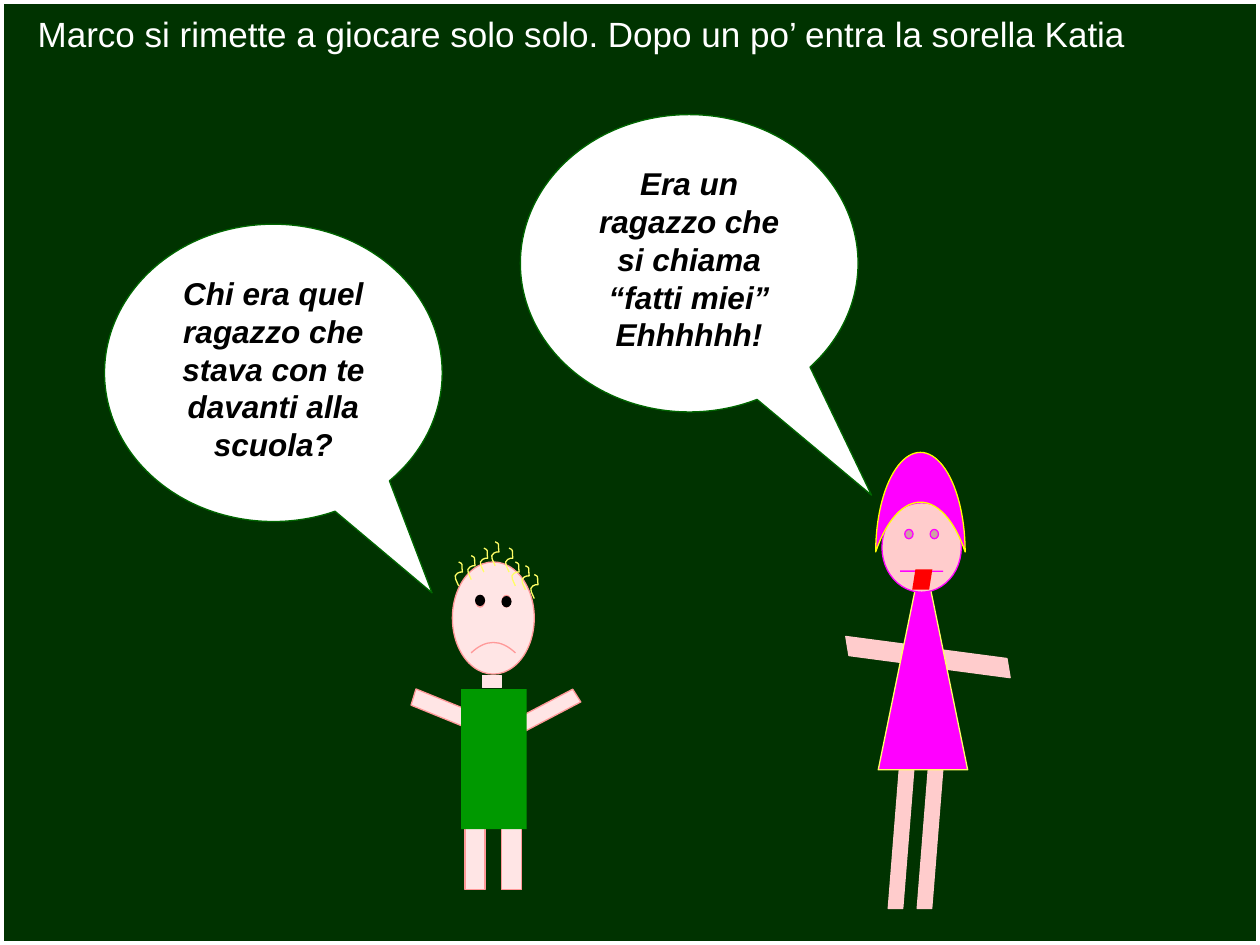
"""Builds a comic slide: Marco and Katia talk in speech balloons."""
from lxml.etree import SubElement
from pptx import Presentation
from pptx.dml.color import RGBColor
from pptx.enum.shapes import MSO_SHAPE as Kind
from pptx.enum.text import MSO_ANCHOR as Anchor, PP_ALIGN as Align
from pptx.oxml.ns import qn
from pptx.util import Inches, Pt

WIDTH, HEIGHT = 10, 7.5
CAPTION = "Marco si rimette a giocare solo solo. Dopo un po’ entra la sorella Katia"
MARCO_WORDS = ["Chi era quel ragazzo che stava con te davanti alla scuola?"]
KATIA_WORDS = ["Era un ragazzo che si chiama “fatti miei”", "Ehhhhhh!"]

NIGHT, WHITE, BLACK, LEAF, SHIRT = "003300", "FFFFFF", "000000", "006600", "009900"
PALE, BLUSH, ROSE, PINK = "FFE5E5", "FF9999", "FFCCCC", "FF00FF"
YELLOW, STRAW, RED = "FFFF00", "FFFF66", "FF0000"
SLANT, BOX, OVAL, SMILEY = Kind.PARALLELOGRAM, Kind.RECTANGLE, Kind.OVAL, Kind.SMILEY_FACE

# kind, left, top, width, height, rotation, adjustments, fill, line
MARCO = [
    (SLANT, 4.28, 5.39, 0.16, 0.49, 57.6, [0.25], PALE, BLUSH),
    (SLANT, 3.42, 5.38, 0.18, 0.49, 106.9, [0.25], PALE, BLUSH),
    (BOX, 3.69, 6.48, 0.16, 0.58, 0, [], PALE, BLUSH),
    (BOX, 3.98, 6.48, 0.16, 0.58, 0, [], PALE, BLUSH),
    (SMILEY, 3.59, 4.46, 0.65, 0.89, 0, [-0.05], PALE, BLUSH),
    (OVAL, 3.98, 4.73, 0.08, 0.09, 0, [], BLACK, None),
    (OVAL, 3.77, 4.72, 0.08, 0.09, 0, [], BLACK, None),
    (BOX, 3.83, 5.36, 0.15, 0.1, 0, [], PALE, PALE),
    (BOX, 3.66, 5.47, 0.52, 1.11, 0, [], SHIRT, None),
]
KATIA = [
    (SLANT, 7.56, 4.99, 0.32, 0.55, 80.7, [0.52], ROSE, ROSE),
    (SLANT, 6.85, 4.89, 0.32, 0.55, 80.7, [0.52], ROSE, ROSE),
    (SLANT, 7.05, 5.64, 0.24, 1.57, 0, [0.52], ROSE, ROSE),
    (SLANT, 7.28, 5.64, 0.24, 1.57, 0, [0.52], ROSE, ROSE),
    (Kind.ISOSCELES_TRIANGLE, 6.97, 4.38, 0.71, 1.73, 0, [0.5], PINK, STRAW),
    (SMILEY, 7, 3.99, 0.63, 0.71, 0, [0], ROSE, PINK),
    (Kind.MOON, 6.91, 3.63, 0.79, 0.71, 90, [0.5], PINK, YELLOW),
]
TONGUE = (SLANT, 7.24, 4.52, 0.16, 0.16, 0, [0.16], RED, None)
MARCO_BALLOON = (Kind.OVAL_CALLOUT, 0.83, 1.78, 2.68, 2.36, 0, [0.47, 0.74], WHITE, LEAF)
KATIA_BALLOON = (Kind.OVAL_CALLOUT, 4.13, 0.91, 2.68, 2.36, 0, [0.54, 0.78], WHITE, LEAF)
FRAME = (BOX, 0, 0, WIDTH, HEIGHT, 0, [], None, WHITE)

CURL_SPOTS = [(3.59, 4.46), (3.69, 4.41), (3.99, 4.35), (4.04, 4.46),
              (3.88, 4.3), (4.19, 4.56), (4.12, 4.49), (3.79, 4.35)]
CURL = [(0.05, 0.19), (0.04, 0.16), (0, 0.11), (0.04, 0.09), (0.05, 0.08),
        (0.07, 0.08), (0.08, 0.08), (0.07, 0.01), (0.09, 0.02), (0.05, 0)]


def color(code):
    return RGBColor.from_string(code)


def paint(shape, fill, line, weight=0.75):
    shape.shadow.inherit = False
    if fill:
        shape.fill.solid()
        shape.fill.fore_color.rgb = color(fill)
    else:
        shape.fill.background()
    if line:
        shape.line.color.rgb = color(line)
        shape.line.width = Pt(weight)
    else:
        shape.line.fill.background()


def draw(shapes, part, weight=0.75):
    kind, left, top, width, height, rotation, adjustments, fill, line = part
    shape = shapes.add_shape(kind, *map(Inches, (left, top, width, height)))
    shape.rotation = rotation
    for index, value in enumerate(adjustments):
        shape.adjustments[index] = value
    paint(shape, fill, line, weight)
    return shape


def bend(shape):
    segments = list(shape.element.iter(qn("a:lnTo")))
    outline = segments[0].getparent()
    for start in range(0, len(segments), 3):
        curve = SubElement(outline, qn("a:cubicBezTo"))
        for segment in segments[start:start + 3]:
            curve.append(segment[0])
            outline.remove(segment)


def draw_curl(shapes, left, top):
    first, *rest = [(Inches(left + x), Inches(top + y)) for x, y in CURL]
    builder = shapes.build_freeform(*first)
    builder.add_line_segments(rest, close=False)
    curl = builder.convert_to_shape()
    bend(curl)
    paint(curl, None, STRAW)


def write(shape, lines, size, ink, emphasis=None, align=Align.LEFT):
    frame = shape.text_frame
    frame.word_wrap = True
    frame.vertical_anchor = Anchor.TOP
    frame.text = "\n".join(lines)
    for paragraph in frame.paragraphs:
        paragraph.alignment = align
        for run in paragraph.runs:
            run.font.name, run.font.size = "Arial", Pt(size)
            run.font.bold = run.font.italic = emphasis
            run.font.color.rgb = color(ink)


def speak(shapes, balloon, lines):
    write(draw(shapes, balloon), lines, 18, BLACK, True, Align.CENTER)


def main():
    deck = Presentation()
    deck.slide_width, deck.slide_height = Inches(WIDTH), Inches(HEIGHT)
    slide = deck.slides.add_slide(deck.slide_layouts[6])
    slide.background.fill.solid()
    slide.background.fill.fore_color.rgb = color(NIGHT)
    shapes = slide.shapes

    draw(shapes, FRAME, 4.5)
    caption = shapes.add_textbox(*map(Inches, (0.2, 0.05, 9.61, 0.43)))
    write(caption, [CAPTION], 20, WHITE)

    marco = shapes.add_group_shape().shapes
    for part in MARCO:
        draw(marco, part)
    for spot in CURL_SPOTS:
        draw_curl(marco, *spot)
    speak(shapes, MARCO_BALLOON, MARCO_WORDS)

    katia = shapes.add_group_shape().shapes
    for part in KATIA:
        draw(katia, part)
    draw(shapes, TONGUE)
    speak(shapes, KATIA_BALLOON, KATIA_WORDS)

    deck.save("out.pptx")


if __name__ == "__main__":
    main()
